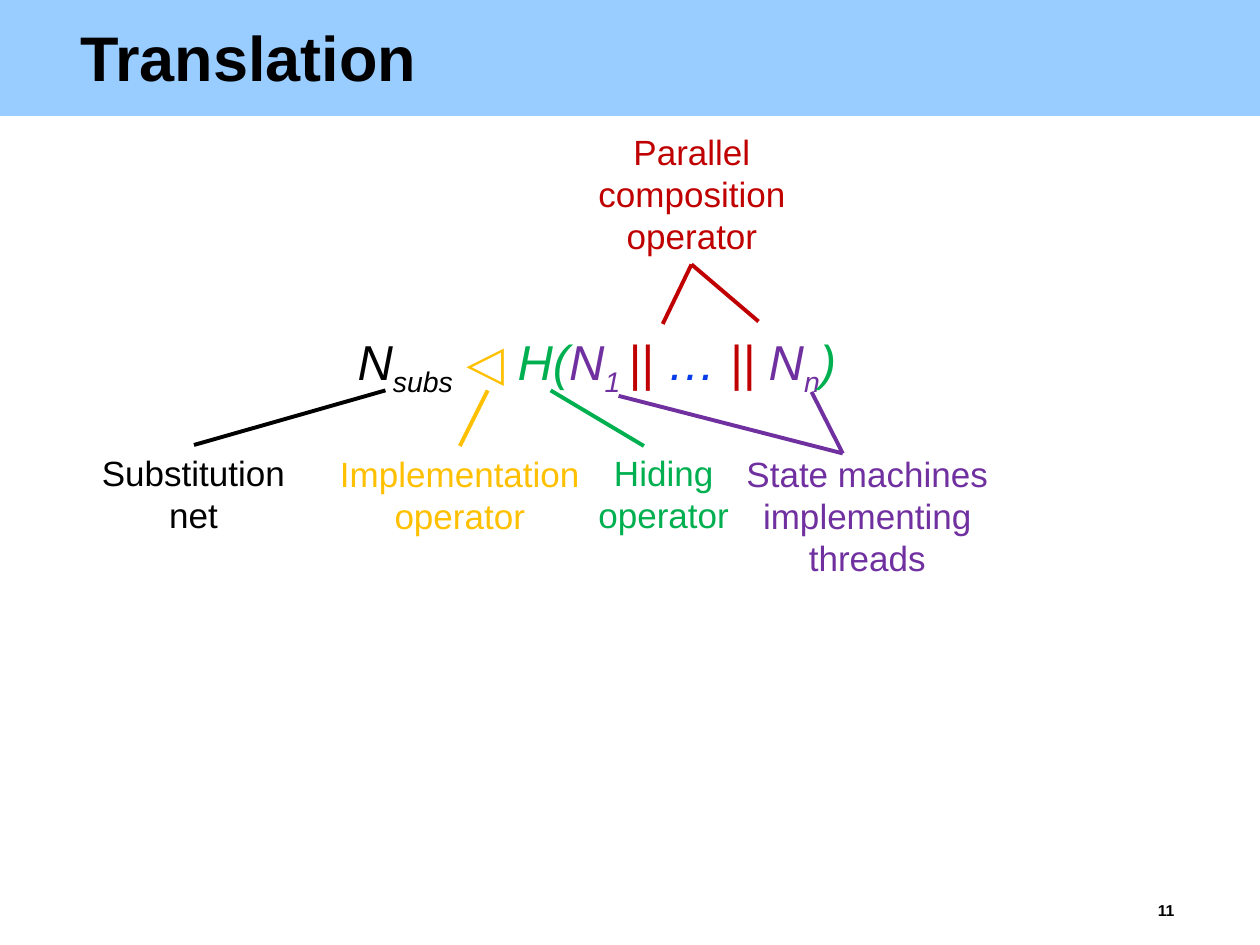
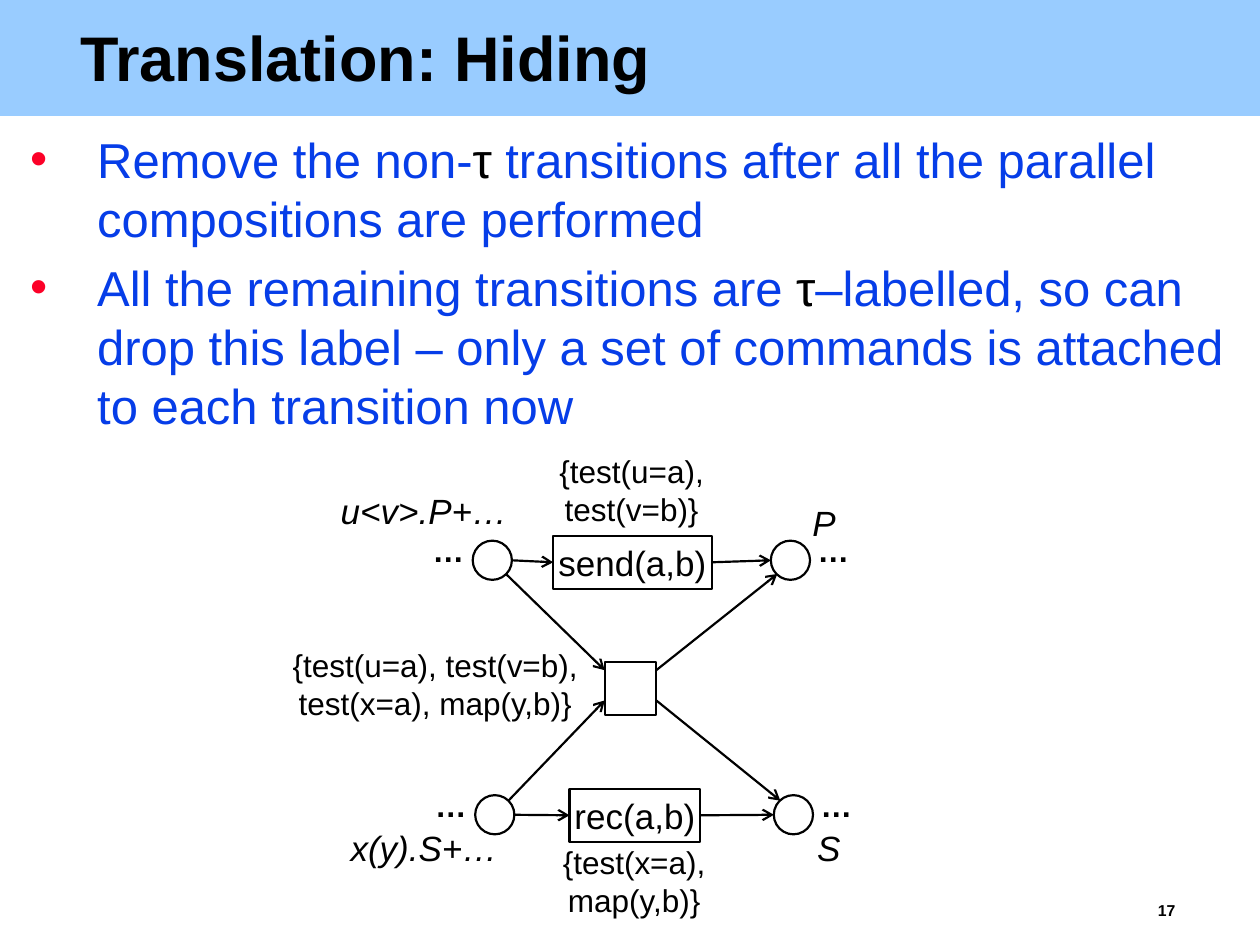
from lxml import etree
from pptx import Presentation
from pptx import util as u
from pptx.dml.color import RGBColor
from pptx.enum import shapes, text
from pptx.oxml.ns import qn

FONT = "Arial"
BLACK, BLUE, GREEN = "000000", "063DE8", "00B050"
RED, PURPLE, AMBER = "C00000", "7030A0", "FFC000"
BAND, BULLET = "99CCFF", "FC0128"
CIRCLE = 0.79
SQUARE_LEFT, SQUARE_TOP, SQUARE_WIDTH, SQUARE_HEIGHT = 12.19, 13.34, 1.04, 1.07


def rgb(color):
    return RGBColor.from_string(color)


def cm(*lengths):
    return [u.Cm(length) for length in lengths]


def style(font, size, color, bold=False, italic=False):
    font.name, font.size = FONT, u.Pt(size)
    font.bold, font.italic = bold, italic
    font.color.rgb = rgb(color)


def set_insets(frame, horizontal, vertical):
    frame.margin_left = frame.margin_right = u.Cm(horizontal)
    frame.margin_top = frame.margin_bottom = u.Cm(vertical)


def add_frame(slide, box, insets=(0, 0), wrap=False):
    frame = slide.shapes.add_textbox(*cm(*box)).text_frame
    frame.word_wrap = wrap
    set_insets(frame, *insets)
    return frame


def write_lines(frame, lines, size, color=BLACK, bold=False, italic=False,
                align=text.PP_ALIGN.CENTER, spacing=None):
    for index, line in enumerate(lines):
        paragraph = frame.add_paragraph() if index else frame.paragraphs[0]
        paragraph.text = line
        paragraph.alignment = align
        paragraph.line_spacing = spacing
        style(paragraph.font, size, color, bold, italic)


def add_label(slide, box, lines, size=20, insets=(0.25, 0.13), **look):
    write_lines(add_frame(slide, box, insets), lines, size, **look)


def add_outline(slide, kind, box):
    shape = slide.shapes.add_shape(kind, *cm(*box))
    shape.shadow.inherit = False
    shape.fill.background()
    shape.line.color.rgb = rgb(BLACK)
    shape.line.width = u.Pt(1.25)
    return shape


def add_line(slide, start, end, color=BLACK, width=1.25, arrow=False):
    line = slide.shapes.add_connector(shapes.MSO_CONNECTOR.STRAIGHT, *cm(*start, *end))
    line.line.color.rgb = rgb(color)
    line.line.width = u.Pt(width)
    if arrow:
        etree.SubElement(line.line._get_or_add_ln(), qn("a:tailEnd"), type="arrow")
    etree.SubElement(line._element.spPr, qn("a:effectLst"))
    return line


def add_base_slide(presentation, title, number):
    slide = presentation.slides.add_slide(presentation.slide_layouts[6])
    band = slide.shapes.add_shape(shapes.MSO_SHAPE.RECTANGLE, *cm(0, 0, 25.4, 2.34))
    band.shadow.inherit = False
    band.fill.solid()
    band.fill.fore_color.rgb = rgb(BAND)
    band.line.fill.background()
    for box, words, size, spacing in (
        ((1.47, 0.53, 22.43, 1.45), title, 36, 0.87),
        ((23.19, 18.14, 0.66, 0.48), number, 9, 0.97),
    ):
        add_label(slide, box, [words], size, (0.15, 0.05), bold=True,
                  align=text.PP_ALIGN.LEFT, spacing=spacing)
    return slide


def add_formula(slide):
    parts = [
        ("N", BLACK, False), ("subs", BLACK, True), (" ◁ ", AMBER, False),
        ("H(", GREEN, False), ("N", PURPLE, False), ("1 ", PURPLE, True),
        ("|| ", RED, False), ("… ", BLUE, False), ("|| ", RED, False),
        ("N", PURPLE, False), ("n", PURPLE, True), (")", GREEN, False),
    ]
    paragraph = add_frame(slide, (7.21, 6.68, 10.2, 1.4)).paragraphs[0]
    for words, color, subscript in parts:
        run = paragraph.add_run()
        run.text = words
        style(run.font, 28, color, italic="◁" not in words)
        if subscript:
            run.font._element.set("baseline", "-25000")


def add_bullets(slide, bullets):
    frame = add_frame(slide, (0.41, 2.51, 24.71, 6.5), (0.2, 0.1), wrap=True)
    for index, parts in enumerate(bullets):
        paragraph = frame.add_paragraph() if index else frame.paragraphs[0]
        paragraph.space_before = u.Pt(6)
        properties = paragraph._p.get_or_add_pPr()
        properties.set("marL", str(u.Cm(1.35)))
        properties.set("indent", str(-u.Cm(1.35)))
        color = etree.SubElement(properties, qn("a:buClr"))
        etree.SubElement(color, qn("a:srgbClr"), val=BULLET)
        etree.SubElement(properties, qn("a:buFont"), typeface=FONT)
        etree.SubElement(properties, qn("a:buChar"), char="•")
        for words in parts:
            run = paragraph.add_run()
            run.text = words
            style(run.font, 28, BLACK if words == "τ" else BLUE)


def add_thread(slide, left, right, top, action, action_box, corner, square_y):
    middle = top + CIRCLE / 2
    for x in (left, right):
        add_outline(slide, shapes.MSO_SHAPE.OVAL, (x, top, CIRCLE, CIRCLE))
    box = add_outline(slide, shapes.MSO_SHAPE.RECTANGLE, action_box)
    frame = box.text_frame
    frame.word_wrap = False
    frame.vertical_anchor = text.MSO_ANCHOR.MIDDLE
    set_insets(frame, 0.1, 0.1)
    write_lines(frame, [action], 20)

    box_left, box_right = action_box[0], action_box[0] + action_box[2]
    add_line(slide, (left + CIRCLE, middle), (box_left, middle), arrow=True).end_connect(box, 1)
    add_line(slide, (box_right, middle), (right, middle), arrow=True).begin_connect(box, 3)
    add_line(slide, (left + 0.67, top + corner), (SQUARE_LEFT, square_y), arrow=True)
    add_line(slide, (SQUARE_LEFT + SQUARE_WIDTH, square_y), (right + 0.13, top + corner),
             arrow=True)
    for x in (left - 0.81, right + 0.94):
        add_label(slide, (x, top - 0.19, 0.64, 0.76), ["…"], 18, (0, 0), bold=True)


def build_translation(presentation):
    slide = add_base_slide(presentation, "Translation", "11")
    add_formula(slide)
    for box, lines, color in (
        ((1.78, 8.97, 4.24, 1.96), ["Substitution", "net"], BLACK),
        ((6.58, 8.99, 5.38, 1.96), ["Implementation", "operator"], AMBER),
        ((11.79, 8.97, 3.18, 1.96), ["Hiding", "operator"], GREEN),
        ((14.78, 8.99, 5.41, 2.82), ["State machines", "implementing", "threads"], PURPLE),
        ((11.79, 2.51, 4.32, 2.82), ["Parallel", "composition", "operator"], RED),
    ):
        add_label(slide, box, lines, color=color)
    for label_end, formula_end, color in (
        ((3.91, 8.97), (7.77, 7.87), BLACK),
        ((9.27, 8.99), (9.83, 7.87), AMBER),
        ((12.98, 8.99), (11.1, 7.87), GREEN),
        ((16.99, 9.14), (12.47, 7.98), PURPLE),
        ((16.99, 9.14), (16.36, 7.9), PURPLE),
        ((13.94, 5.33), (13.36, 6.53), RED),
        ((13.94, 5.33), (15.29, 6.48), RED),
    ):
        add_line(slide, label_end, formula_end, color, 2.25)


def build_hiding(presentation):
    slide = add_base_slide(presentation, "Translation: Hiding", "17")
    add_bullets(slide, [
        ["Remove the non-", "τ",
         " transitions after all the parallel compositions are performed"],
        ["All the remaining transitions are ", "τ",
         "–labelled, so can drop this label – only a set of commands"
         " is attached to each transition now"],
    ])
    add_thread(slide, 9.53, 15.54, 10.9, "send(a,b)", (11.15, 10.8, 3.2, 1.07), 0.67, 13.51)
    add_thread(slide, 9.58, 15.6, 16.03, "rec(a,b)", (11.48, 15.9, 2.64, 1.07), 0.11, 14.12)
    add_outline(slide, shapes.MSO_SHAPE.RECTANGLE,
                (SQUARE_LEFT, SQUARE_TOP, SQUARE_WIDTH, SQUARE_HEIGHT))
    for box, state in (
        ((6.15, 9.73, 4.8, 1.12), "u<v>.P+…"),
        ((15.75, 9.98, 1.73, 1.12), "P"),
        ((6.15, 16.54, 4.8, 1.12), "x(y).S+…"),
        ((15.87, 16.54, 1.68, 1.12), "S"),
    ):
        add_label(slide, box, [state], italic=True)
    for box, commands in (
        ((11.25, 9.12, 2.97, 1.55), ["{test(u=a),", "test(v=b)}"]),
        ((5.84, 13.03, 5.87, 1.55), ["{test(u=a), test(v=b),", "test(x=a), map(y,b)}"]),
        ((11.3, 16.99, 2.97, 1.55), ["{test(x=a),", "map(y,b)}"]),
    ):
        add_label(slide, box, commands, 18, (0, 0))


def main():
    presentation = Presentation()
    presentation.slide_width, presentation.slide_height = cm(25.4, 19.05)
    build_translation(presentation)
    build_hiding(presentation)
    presentation.save("out.pptx")


if __name__ == "__main__":
    main()
